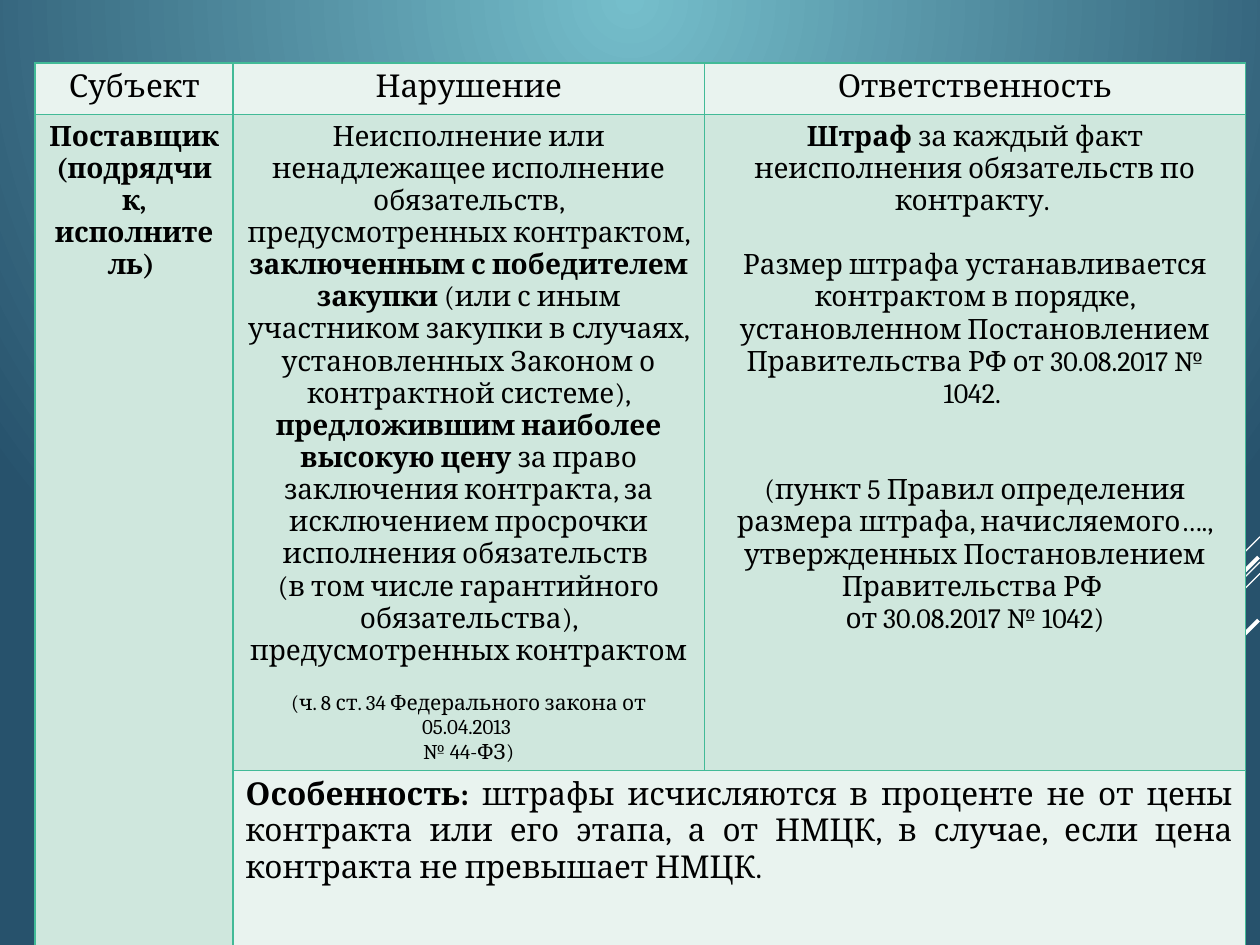
from lxml import etree
from pptx import Presentation
from pptx.dml.color import RGBColor
from pptx.enum import shapes, text
from pptx.oxml.ns import qn
from pptx.util import Cm, Pt

WHITE = RGBColor(0xFF, 0xFF, 0xFF)
BLACK = RGBColor(0, 0, 0)
SKY = RGBColor(0x75, 0xBE, 0xCB)
NAVY = RGBColor(0x27, 0x52, 0x6C)
GREEN = RGBColor(0x42, 0xBA, 0x97)
PALE = RGBColor(0xE9, 0xF3, 0xEF)
MINT = RGBColor(0xCF, 0xE7, 0xDD)

FONT = "Cambria"
CENTER = text.PP_ALIGN.CENTER
WIDTH, HEIGHT = 25.4, 19.05  # slide, cm

# A paragraph is (size, space before, runs); a run is (text, bold)
HEADINGS = ["Субъект", "Нарушение", "Ответственность"]
SUBJECT = [(16, 0, [("Поставщик (подрядчик, исполнитель) ", True)])]
VIOLATION = [
    (16, 0, [
        ("Неисполнение или ненадлежащее исполнение обязательств, "
         "предусмотренных контрактом, ", False),
        ("заключенным с победителем закупки ", True),
        ("(или с иным участником закупки в случаях, установленных Законом "
         "о контрактной системе), ", False),
        ("предложившим наиболее высокую цену ", True),
        ("за право заключения контракта, за исключением просрочки "
         "исполнения обязательств ", False)]),
    (16, 0, [("(в том числе гарантийного обязательства), "
              "предусмотренных контрактом", False)]),
    (12, 14, [("(ч. 8 ст. 34 Федерального закона от 05.04.2013 \n"
               "№ 44-ФЗ)", False)]),
]
LIABILITY = [
    (16, 0, [("Штраф", True),
             (" за каждый факт неисполнения обязательств по контракту. ", False)]),
    (16, 18.4, [("Размер штрафа устанавливается контрактом в порядке, установленном "
                 "Постановлением Правительства РФ от 30.08.2017 № 1042. ", False)]),
    (16, 36.8, [("(пункт 5 Правил определения размера штрафа, начисляемого…., "
                 "утвержденных Постановлением Правительства РФ \n"
                 "от 30.08.2017 № 1042)", False)]),
]
FEATURE = [
    (18, 0, [("Особенность:", True),
             (" штрафы исчисляются в проценте не от цены контракта "
              "или его этапа, а от НМЦК, в случае, если цена "
              "контракта не превышает НМЦК.", False)]),
]


def set_background(s):
    """Round gradient spreading from the middle of the top edge."""
    fill = s.background.fill
    fill.gradient()
    for stop, color in zip(fill.gradient_stops, (SKY, NAVY)):
        stop.color.rgb = color
    grad = next(s.element.iter(qn("a:gradFill")))
    grad.remove(grad.find(qn("a:lin")))
    circle = etree.SubElement(grad, qn("a:path"), {"path": "circle"})
    etree.SubElement(circle, qn("a:fillToRect"), {"b": "100000"})


def add_streaks(s, left, top):
    """Diagonal lines; each runs down and left at 45 degrees."""
    group = s.shapes.add_group_shape()
    streaks = [(25.4, 10.82, 2.11, 0.75), (25.4, 11.33, 6.87, 0.75),
               (25.4, 11.56, 4.37, 0.75), (25.37, 11.23, 3.98, 2.25),
               (25.37, 12.5, 2.89, 2.25)]
    for x, y, run, weight in streaks:
        x, y = left + x, top + y
        line = group.shapes.add_connector(
            shapes.MSO_CONNECTOR.STRAIGHT, Cm(x), Cm(y), Cm(x - run), Cm(y + run))
        line.line.color.rgb = WHITE
        line.line.width = Pt(weight)
        etree.SubElement(line.element.spPr, qn("a:effectLst"))


def add_borders(cell):
    tcPr = cell._tc.get_or_add_tcPr()
    for i, side in enumerate(("lnL", "lnR", "lnT", "lnB")):
        ln = etree.Element(qn("a:" + side), {"w": str(Pt(1))})
        solid = etree.SubElement(ln, qn("a:solidFill"))
        etree.SubElement(solid, qn("a:srgbClr"), {"val": str(GREEN)})
        tcPr.insert(i, ln)


def fill_cell(cell, paragraphs, align=CENTER):
    tf = cell.text_frame
    for i, (size, before, runs) in enumerate(paragraphs):
        p = tf.add_paragraph() if i else tf.paragraphs[0]
        p.alignment = align
        p.space_before = Pt(before)
        p.font.name = FONT
        p.font.size = Pt(size)
        p.font.color.rgb = BLACK
        for words, bold in runs:
            for j, part in enumerate(words.split("\n")):
                if j:
                    p.add_line_break()
                r = p.add_run()
                r.text = part
                r.font.bold = bold


def add_penalty_table(s, left, top, width, height):
    frame = s.shapes.add_table(3, 3, Cm(left), Cm(top), Cm(width), Cm(height))
    table = frame.table
    table.first_row = table.horz_banding = False
    columns = [3.99, 9.5]
    rows = [1.04, 11.81]
    for column, size in zip(table.columns, columns + [width - sum(columns)]):
        column.width = Cm(size)
    for row, size in zip(table.rows, rows + [height - sum(rows)]):
        row.height = Cm(size)

    # Fills and borders
    for r, color in enumerate((PALE, MINT, PALE)):
        for c in range(3):
            cell = table.cell(r, c)
            cell.fill.solid()
            cell.fill.fore_color.rgb = color
            add_borders(cell)
    table.cell(1, 0).merge(table.cell(2, 0))
    table.cell(2, 1).merge(table.cell(2, 2))

    # Text
    for c, heading in enumerate(HEADINGS):
        fill_cell(table.cell(0, c), [(18, 0, [(heading, False)])])
    for c, paragraphs in enumerate((SUBJECT, VIOLATION, LIABILITY)):
        fill_cell(table.cell(1, c), paragraphs)
    fill_cell(table.cell(2, 1), FEATURE, text.PP_ALIGN.JUSTIFY)


def main():
    prs = Presentation()
    prs.slide_width, prs.slide_height = Cm(WIDTH), Cm(HEIGHT)
    s = prs.slides.add_slide(prs.slide_layouts[6])
    set_background(s)
    add_streaks(s, 0, 0)
    add_penalty_table(s, 0.71, 1.27, 24.4, 17.4)
    prs.save("out.pptx")


if __name__ == "__main__":
    main()
